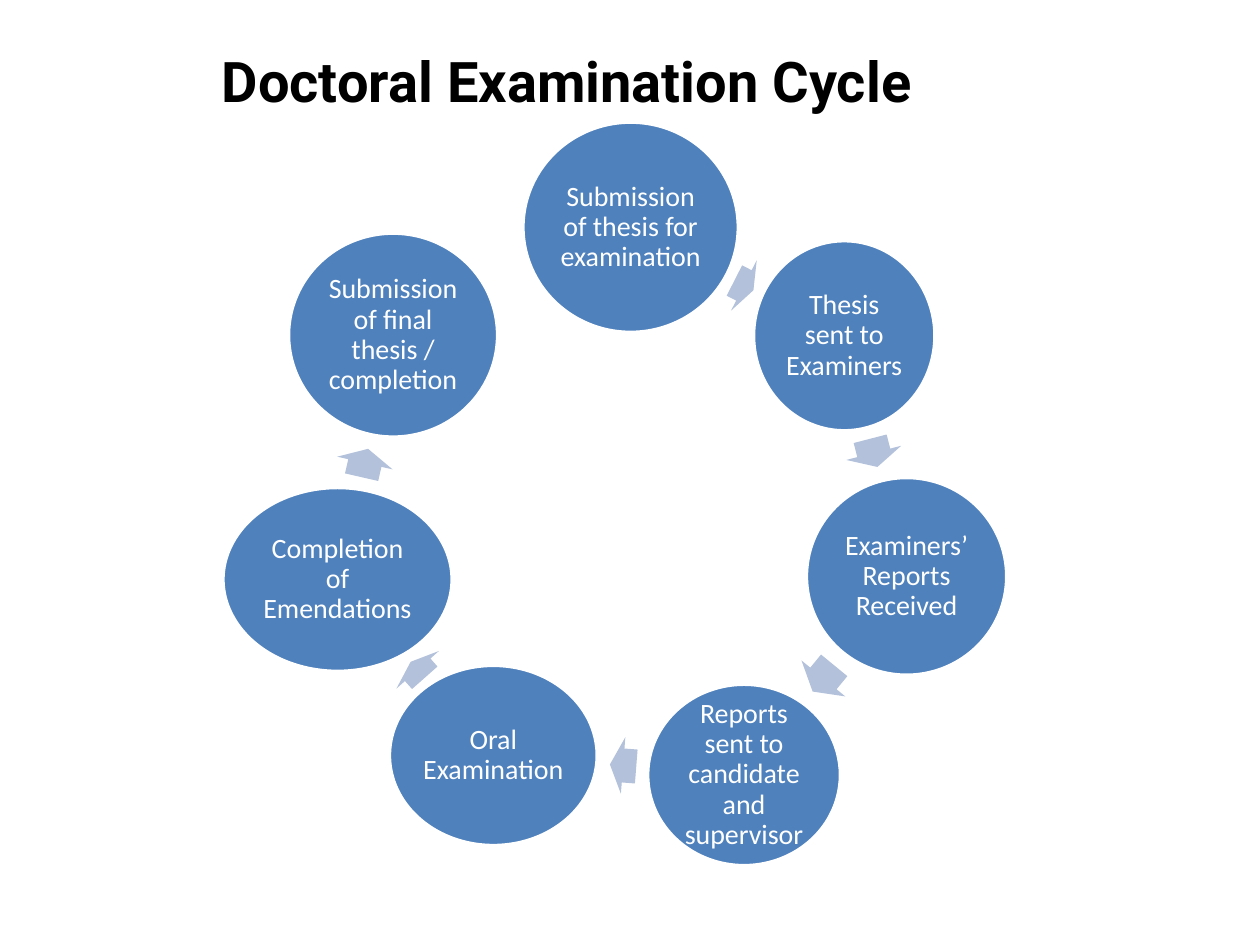
from pptx import Presentation
from pptx.dml.color import RGBColor
from pptx.enum.shapes import MSO_SHAPE
from pptx.enum.text import MSO_ANCHOR, PP_ALIGN
from pptx.util import Pt

OVAL, ARROW = MSO_SHAPE.OVAL, MSO_SHAPE.RIGHT_ARROW
CENTER, MIDDLE = PP_ALIGN.CENTER, MSO_ANCHOR.MIDDLE
BLUE, PALE_BLUE, WHITE, BLACK = "4F81BD", "B3C1DB", "FFFFFF", "000000"
ARROW_HEIGHT = 32.4

# Each stage: text, (left, top, width, height)
STAGES = [
    ("Submission of thesis for examination", (298.8, 69.8, 123.1, 120.2)),
    ("Thesis sent to Examiners", (430.6, 137.5, 103.7, 108.7)),
    ("Examiners’ Reports Received", (460.8, 272.9, 114.5, 113)),
    ("Reports sent to candidate and supervisor", (370.1, 391, 110.2, 103.7)),
    ("Oral Examination", (222.5, 380.2, 118.8, 103)),
    ("Completion of Emendations", (127.4, 278.6, 131, 105.1)),
    ("Submission of final thesis / completion", (164.9, 133.2, 119.5, 116.6)),
]
# Each arrow: left, top, width, rotation; it leads from one stage to the next
ARROWS = [
    (419, 146.9, 12.2, 27),
    (491, 242.6, 16.6, 75.5),
    (460.8, 371.5, 19.4, 129.4),
    (348.5, 421.2, 15.1, 184.5),
    (232.6, 366.5, 12.2, 228.5),
    (200.2, 248.4, 16.6, 282.9),
]


def rgb(color):
    return RGBColor.from_string(color)


def write(sp, text, font, size, color, bold=False):
    """Put one centred paragraph into a shape and return it."""
    tf = sp.text_frame
    tf.word_wrap = True
    tf.vertical_anchor = MIDDLE
    p = tf.paragraphs[0]
    p.text = text
    p.alignment = CENTER
    p.font.name, p.font.size, p.font.bold = font, Pt(size), bold
    p.font.color.rgb = rgb(color)
    return p


def add_filled(s, kind, box, color):
    sp = s.shapes.add_shape(kind, *map(Pt, box))
    sp.shadow.inherit = False
    sp.fill.solid()
    sp.fill.fore_color.rgb = rgb(color)
    return sp


def add_title(s, box, text):
    sp = s.shapes.add_textbox(*map(Pt, box))
    write(sp, text, "Roboto", 32, BLACK, bold=True)


def add_stage(s, box, text):
    sp = add_filled(s, OVAL, box, BLUE)
    sp.line.color.rgb = rgb(WHITE)
    sp.line.width = Pt(2)
    tf = sp.text_frame
    tf.margin_left = tf.margin_top = tf.margin_right = tf.margin_bottom = Pt(1.6)
    write(sp, text, "Calibri", 16, WHITE).line_spacing = 0.9


def add_arrow(s, box, rotation):
    sp = add_filled(s, ARROW, box, PALE_BLUE)
    sp.line.fill.background()
    sp.adjustments[0], sp.adjustments[1] = 0.6, 0.5
    sp.rotation = rotation


def add_cycle(s):
    for i, (text, box) in enumerate(STAGES):
        add_stage(s, box, text)
        if i < len(ARROWS):
            left, top, width, rotation = ARROWS[i]
            add_arrow(s, (left, top, width, ARROW_HEIGHT), rotation)


def main():
    prs = Presentation()
    prs.slide_width, prs.slide_height = Pt(720), Pt(540)
    s = prs.slides.add_slide(prs.slide_layouts[6])
    add_title(s, (0, 23.5, 648, 44.6), "Doctoral Examination Cycle")
    add_cycle(s)
    prs.save("out.pptx")


if __name__ == "__main__":
    main()
